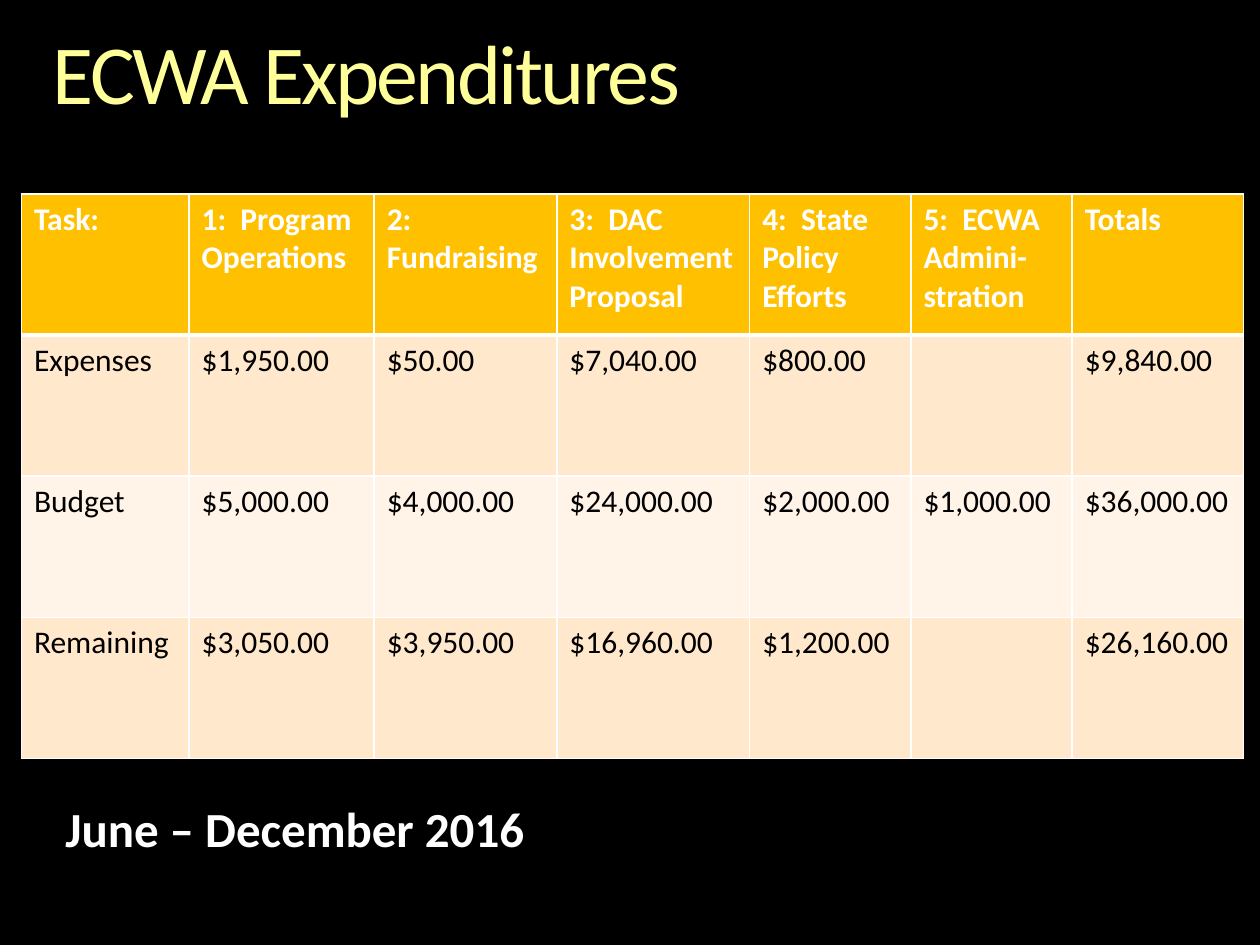
from dataclasses import dataclass

from lxml import etree
from pptx import Presentation
from pptx.dml.color import RGBColor
from pptx.enum.text import MSO_AUTO_SIZE
from pptx.oxml.ns import qn
from pptx.util import Inches, Pt

FIT_SHAPE = MSO_AUTO_SIZE.SHAPE_TO_FIT_TEXT
FONT = "Calibri"
WHITE, BLACK, GOLD, YELLOW = "FFFFFF", "000000", "FFC000", "FFFF99"
BANDS = ("FFE8CC", "FFF4E7")

COLUMN_WIDTHS = (1.33, 1.47, 1.45, 1.53, 1.28, 1.28, 1.36)
ROW_HEIGHT = 1.12
EXPENDITURES = (
    ("Task:", "1:  Program Operations", "2:  Fundraising",
     "3:  DAC Involvement Proposal", "4:  State Policy Efforts",
     "5:  ECWA Admini-stration", "Totals"),
    ("Expenses", "$1,950.00", "$50.00", "$7,040.00", "$800.00", "", "$9,840.00"),
    ("Budget", "$5,000.00", "$4,000.00", "$24,000.00", "$2,000.00",
     "$1,000.00", "$36,000.00"),
    ("Remaining", "$3,050.00", "$3,950.00", "$16,960.00", "$1,200.00", "",
     "$26,160.00"),
)


@dataclass
class Label:
    text: str
    left: float
    top: float
    width: float
    height: float
    size: float
    color: str
    bold: bool = False
    wrap: bool = False
    inset: bool = True
    line_spacing: float = 1.0
    tracking: float = 0


LABELS = (
    Label("ECWA Expenditures", 0.42, 0.25, 9.17, 0.73, 48, YELLOW,
          wrap=True, inset=False, line_spacing=0.9, tracking=-1.5),
    Label("June – December 2016", 0.42, 6.29, 3.89, 0.57, 28, WHITE, bold=True),
)


def rgb(color: str) -> RGBColor:
    return RGBColor.from_string(color)


def add_run(p, text: str, size: float, color: str, bold: bool):
    r = p.add_run()
    r.text = text
    r.font.name = FONT
    r.font.size = Pt(size)
    r.font.bold = bold
    r.font.color.rgb = rgb(color)
    return r


def add_label(slide, label: Label) -> None:
    box = slide.shapes.add_textbox(Inches(label.left), Inches(label.top),
                                   Inches(label.width), Inches(label.height))
    tf = box.text_frame
    tf.word_wrap = label.wrap
    tf.auto_size = FIT_SHAPE
    if not label.inset:
        tf.margin_left = tf.margin_top = tf.margin_right = tf.margin_bottom = 0
    p = tf.paragraphs[0]
    p.line_spacing = label.line_spacing
    r = add_run(p, label.text, label.size, label.color, label.bold)
    if label.tracking:
        r.font._element.set("spc", str(round(label.tracking * 100)))


def set_borders(cell, top: float, bottom: float) -> None:
    """Give a cell white borders; widths are in points."""
    tc_pr = cell._tc.get_or_add_tcPr()
    edges = (("a:lnL", 1), ("a:lnR", 1), ("a:lnT", top), ("a:lnB", bottom))
    for i, (tag, width) in enumerate(edges):
        ln = etree.Element(qn(tag), w=str(Pt(width)))
        fill = etree.SubElement(ln, qn("a:solidFill"))
        etree.SubElement(fill, qn("a:srgbClr"), val=WHITE)
        tc_pr.insert(i, ln)


def add_expenditure_table(slide) -> None:
    n_rows = len(EXPENDITURES)
    table = slide.shapes.add_table(
        n_rows, len(COLUMN_WIDTHS), Inches(0.17), Inches(1.54),
        Inches(sum(COLUMN_WIDTHS)), Inches(n_rows * ROW_HEIGHT)).table
    for column, width in zip(table.columns, COLUMN_WIDTHS):
        column.width = Inches(width)
    for i, values in enumerate(EXPENDITURES):
        header = i == 0
        table.rows[i].height = Inches(ROW_HEIGHT)
        for j, value in enumerate(values):
            cell = table.cell(i, j)
            cell.fill.solid()
            cell.fill.fore_color.rgb = rgb(GOLD if header else BANDS[(i - 1) % 2])
            set_borders(cell, top=3 if i == 1 else 1, bottom=3 if header else 1)
            if value:
                add_run(cell.text_frame.paragraphs[0], value, 18,
                        WHITE if header else BLACK, header)


def main() -> None:
    prs = Presentation()
    prs.slide_width, prs.slide_height = Inches(10), Inches(7.5)
    s = prs.slides.add_slide(prs.slide_layouts[6])
    s.background.fill.solid()
    s.background.fill.fore_color.rgb = rgb(BLACK)
    title, period = LABELS
    add_label(s, title)
    add_expenditure_table(s)
    add_label(s, period)
    prs.save("out.pptx")


if __name__ == "__main__":
    main()
